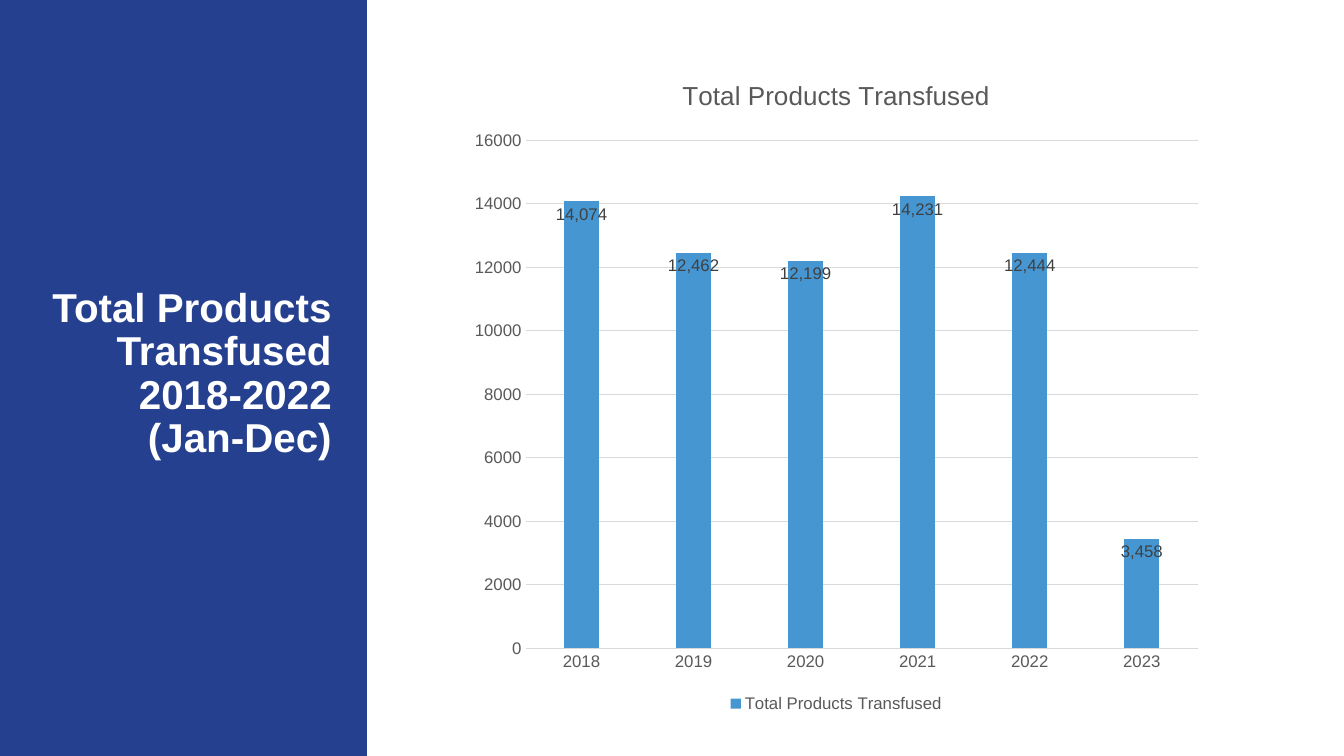
"""Build the slide of total products transfused per year."""
import pptx
import pptx.chart.data
import pptx.dml.color
import pptx.enum.chart
import pptx.enum.shapes
import pptx.enum.text
import pptx.util

HEADING = "Total Products Transfused 2018-2022 (Jan-Dec)"
MEASURE = "Total Products Transfused"
TRANSFUSED = {
    "2018": 14074,
    "2019": 12462,
    "2020": 12199,
    "2021": 14231,
    "2022": 12444,
    "2023": 3458,
}
NAVY, BLUE, WHITE = "25408F", "4696D2", "FFFFFF"
GREY, DARK, PALE = "595959", "404040", "D9D9D9"
WIDTH, HEIGHT = 13.33, 7.5
BAND_BOX = (0, 0, 3.64, HEIGHT)
HEADING_BOX = (0.25, 2.99, 3.14, 1.45)
CHART_BOX = (4.56, 0.54, 7.47, 6.57)


def colour(value):
    """Turn a hex string into a colour."""
    return pptx.dml.color.RGBColor.from_string(value)


def inches(box):
    """Turn left, top, width and height into lengths."""
    return [pptx.util.Inches(length) for length in box]


def style(font, size, value, bold=False):
    """Set the face, size and colour of a font."""
    font.name = "Arial"
    font.size = pptx.util.Pt(size)
    font.bold = bold
    font.color.rgb = colour(value)


def rule(line):
    """Draw a thin pale line."""
    line.color.rgb = colour(PALE)
    line.width = pptx.util.Pt(0.75)


def add_heading(slide):
    """Place the heading on the navy band."""
    heading = slide.shapes.title
    heading.left, heading.top, heading.width, heading.height = inches(HEADING_BOX)
    frame = heading.text_frame
    frame.text = HEADING
    frame.word_wrap = True
    frame.auto_size = pptx.enum.text.MSO_AUTO_SIZE.NONE
    frame.vertical_anchor = pptx.enum.text.MSO_ANCHOR.MIDDLE
    paragraph = frame.paragraphs[0]
    paragraph.alignment = pptx.enum.text.PP_ALIGN.RIGHT
    paragraph.line_spacing = 0.9
    style(paragraph.font, 28.8, WHITE, bold=True)

    band = slide.shapes.add_shape(
        pptx.enum.shapes.MSO_SHAPE.RECTANGLE, *inches(BAND_BOX))
    band.shadow.inherit = False
    band.fill.solid()
    band.fill.fore_color.rgb = colour(NAVY)
    band.line.fill.background()
    heading.element.addprevious(band.element)


def add_yearly_chart(slide):
    """Chart the products transfused in each year."""
    yearly = pptx.chart.data.CategoryChartData(number_format="#,##0")
    yearly.categories = list(TRANSFUSED)
    yearly.add_series(MEASURE, list(TRANSFUSED.values()))
    chart = slide.shapes.add_chart(
        pptx.enum.chart.XL_CHART_TYPE.COLUMN_CLUSTERED,
        *inches(CHART_BOX), yearly).chart
    style(chart.font, 12, GREY)

    chart.has_title = True
    chart.chart_title.include_in_layout = False
    chart.chart_title.text_frame.text = MEASURE
    style(chart.chart_title.text_frame.paragraphs[0].font, 18.6, GREY)

    chart.has_legend = True
    chart.legend.position = pptx.enum.chart.XL_LEGEND_POSITION.BOTTOM
    chart.legend.include_in_layout = False
    style(chart.legend.font, 12, GREY)

    years, amounts = chart.category_axis, chart.value_axis
    for axis in (years, amounts):
        axis.major_tick_mark = pptx.enum.chart.XL_TICK_MARK.NONE
        axis.minor_tick_mark = pptx.enum.chart.XL_TICK_MARK.NONE
        style(axis.tick_labels.font, 12, GREY)
    rule(years.format.line)
    amounts.format.line.fill.background()
    amounts.minimum_scale, amounts.maximum_scale = 0, 16000
    amounts.major_unit = 2000
    amounts.tick_labels.number_format = "0"
    amounts.tick_labels.number_format_is_linked = False
    rule(amounts.major_gridlines.format.line)

    plot = chart.plots[0]
    plot.gap_width, plot.overlap = 219, -27
    plot.vary_by_categories = False
    columns = plot.series[0]
    columns.format.fill.solid()
    columns.format.fill.fore_color.rgb = colour(BLUE)
    labels = columns.data_labels
    labels.show_value = True
    labels.position = pptx.enum.chart.XL_LABEL_POSITION.INSIDE_END
    labels.number_format = "#,##0"
    labels.number_format_is_linked = False
    style(labels.font, 12, DARK)


def main():
    """Build and save the slide."""
    deck = pptx.Presentation()
    deck.slide_width = pptx.util.Inches(WIDTH)
    deck.slide_height = pptx.util.Inches(HEIGHT)
    slide = deck.slides.add_slide(deck.slide_layouts.get_by_name("Title Only"))
    add_heading(slide)
    add_yearly_chart(slide)
    deck.save("out.pptx")


if __name__ == "__main__":
    main()
